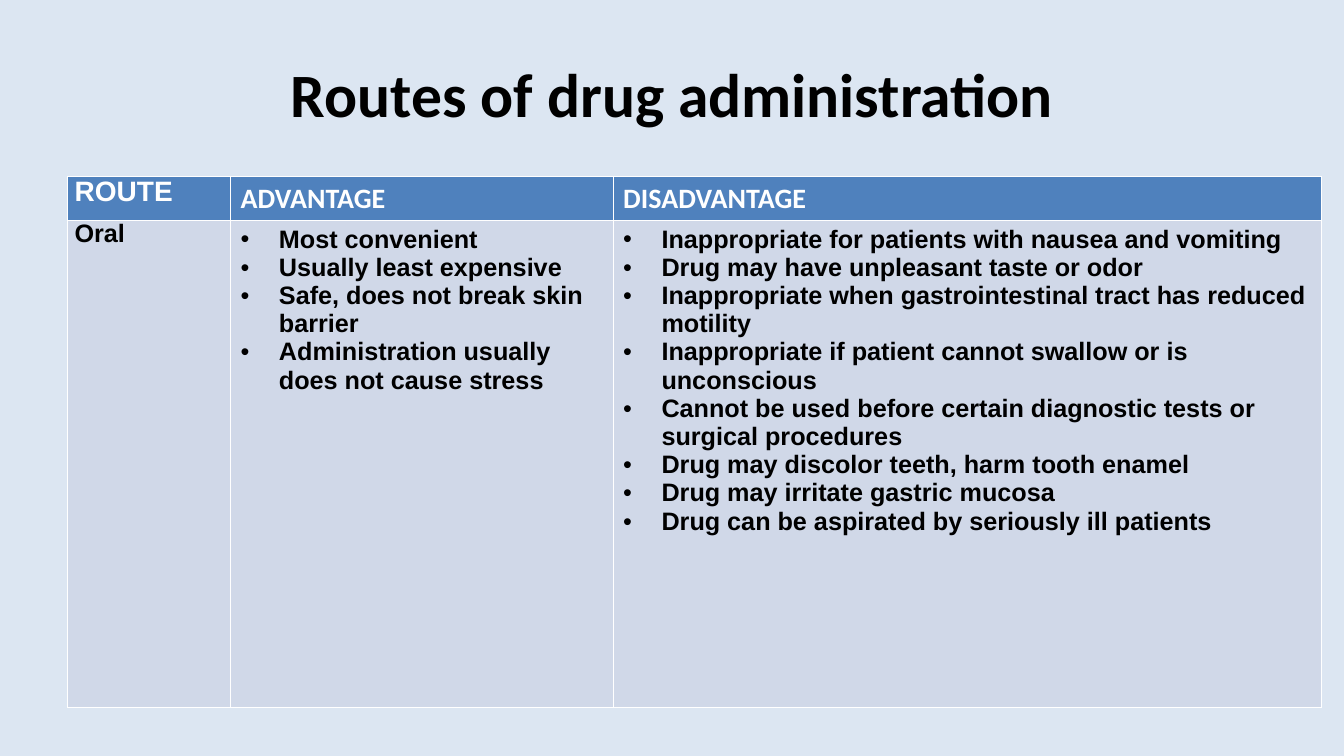
from pptx import Presentation
from pptx.dml.color import RGBColor
from pptx.enum.text import MSO_ANCHOR, PP_ALIGN
from pptx.oxml import parse_xml
from pptx.oxml.ns import nsdecls
from pptx.util import Inches, Pt

CENTER, LEFT = PP_ALIGN.CENTER, PP_ALIGN.LEFT
MIDDLE, TOP = MSO_ANCHOR.MIDDLE, MSO_ANCHOR.TOP

THEME = {
    "background": "DCE6F2", "header": "4F81BD", "body": "D0D8E8",
    "border": "FFFFFF", "border_width": Pt(1), "hanging": Inches(0.38),
    "title_text": {"name": "Calibri", "size": Pt(44), "color": "000000"},
    "route_text": {"name": "Arial", "size": Pt(20), "color": "FFFFFF"},
    "header_text": {"name": "Calibri", "size": Pt(20), "color": "FFFFFF"},
    "body_text": {"name": "Arial", "size": Pt(18), "color": "000000"},
}

SLIDE_SIZE = Inches(13.33), Inches(7.5)
TITLE_BOX = [Inches(n) for n in (0.67, 0.3, 12, 1.25)]
TABLE_BOX = [Inches(n) for n in (0.67, 1.75, 12.44, 5.26)]
COLUMN_SHARES = (0.13, 0.305, 0.565)
ROW_SHARES = (0.08, 0.92)

TITLE = "Routes of drug administration"
HEADERS = ("ROUTE", "ADVANTAGE", "DISADVANTAGE")
ROUTE = "Oral"
ADVANTAGES = (
    "Most convenient",
    "Usually least expensive",
    "Safe, does not break skin barrier",
    "Administration usually does not cause stress",
)
DISADVANTAGES = (
    "Inappropriate for patients with nausea and vomiting",
    "Drug may have unpleasant taste or odor",
    "Inappropriate when gastrointestinal tract has reduced motility",
    "Inappropriate if patient cannot swallow or is unconscious",
    "Cannot be used before certain diagnostic tests or surgical procedures",
    "Drug may discolor teeth, harm tooth enamel",
    "Drug may irritate gastric mucosa",
    "Drug can be aspirated by seriously ill patients",
)


def write_lines(text_frame, lines, style, align=LEFT, bulleted=False):
    text_frame.word_wrap = True
    for index, line in enumerate(lines):
        paragraph = text_frame.paragraphs[0] if index == 0 else text_frame.add_paragraph()
        paragraph.alignment = align
        run = paragraph.add_run()
        run.text = line
        run.font.bold = True
        run.font.color.rgb = RGBColor.from_string(style["color"])
        for name in ("name", "size"):
            setattr(run.font, name, style[name])
        if bulleted:
            add_bullet(paragraph)


def add_bullet(paragraph):
    properties = paragraph._p.get_or_add_pPr()
    properties.set("marL", str(THEME["hanging"]))
    properties.set("indent", str(-THEME["hanging"]))
    properties.append(parse_xml(f'<a:buFont {nsdecls("a")} typeface="Arial"/>'))
    properties.append(parse_xml(f'<a:buChar {nsdecls("a")} char="•"/>'))


def format_cell(cell, fill, insets):
    properties = cell._tc.get_or_add_tcPr()
    for side in "LRTB":
        properties.append(parse_xml(
            f'<a:ln{side} {nsdecls("a")} w="{THEME["border_width"]}"><a:solidFill>'
            f'<a:srgbClr val="{THEME["border"]}"/></a:solidFill></a:ln{side}>'))
    cell.fill.solid()
    cell.fill.fore_color.rgb = RGBColor.from_string(fill)
    cell.vertical_anchor = TOP
    horizontal, vertical = insets
    margins = {"margin_left": horizontal, "margin_right": horizontal,
               "margin_top": vertical, "margin_bottom": vertical}
    for name, value in margins.items():
        setattr(cell, name, Inches(value))


def add_title(slide, box):
    text_frame = slide.shapes.add_textbox(*box).text_frame
    text_frame.vertical_anchor = MIDDLE
    write_lines(text_frame, [TITLE], THEME["title_text"], CENTER)


def add_routes_table(slide, box):
    width, height = box[2:]
    table = slide.shapes.add_table(len(ROW_SHARES), len(COLUMN_SHARES), *box).table
    table.horz_banding = False
    for column, share in zip(table.columns, COLUMN_SHARES):
        column.width = int(width * share)
    for row, share in zip(table.rows, ROW_SHARES):
        row.height = int(height * share)

    # The route column has tighter margins and no bullets
    contents = ([ROUTE], ADVANTAGES, DISADVANTAGES)
    for column, (header, lines) in enumerate(zip(HEADERS, contents)):
        is_route = column == 0
        insets = (0.07, 0) if is_route else (0.1, 0.05)
        header_style = THEME["route_text" if is_route else "header_text"]
        header_cell, body_cell = table.cell(0, column), table.cell(1, column)
        format_cell(header_cell, THEME["header"], insets)
        format_cell(body_cell, THEME["body"], insets)
        write_lines(header_cell.text_frame, [header], header_style)
        write_lines(body_cell.text_frame, lines, THEME["body_text"], bulleted=not is_route)


def main():
    presentation = Presentation()
    presentation.slide_width, presentation.slide_height = SLIDE_SIZE
    slide = presentation.slides.add_slide(presentation.slide_layouts[6])
    slide.background.fill.solid()
    slide.background.fill.fore_color.rgb = RGBColor.from_string(THEME["background"])
    add_title(slide, TITLE_BOX)
    add_routes_table(slide, TABLE_BOX)
    presentation.save("out.pptx")


if __name__ == "__main__":
    main()
